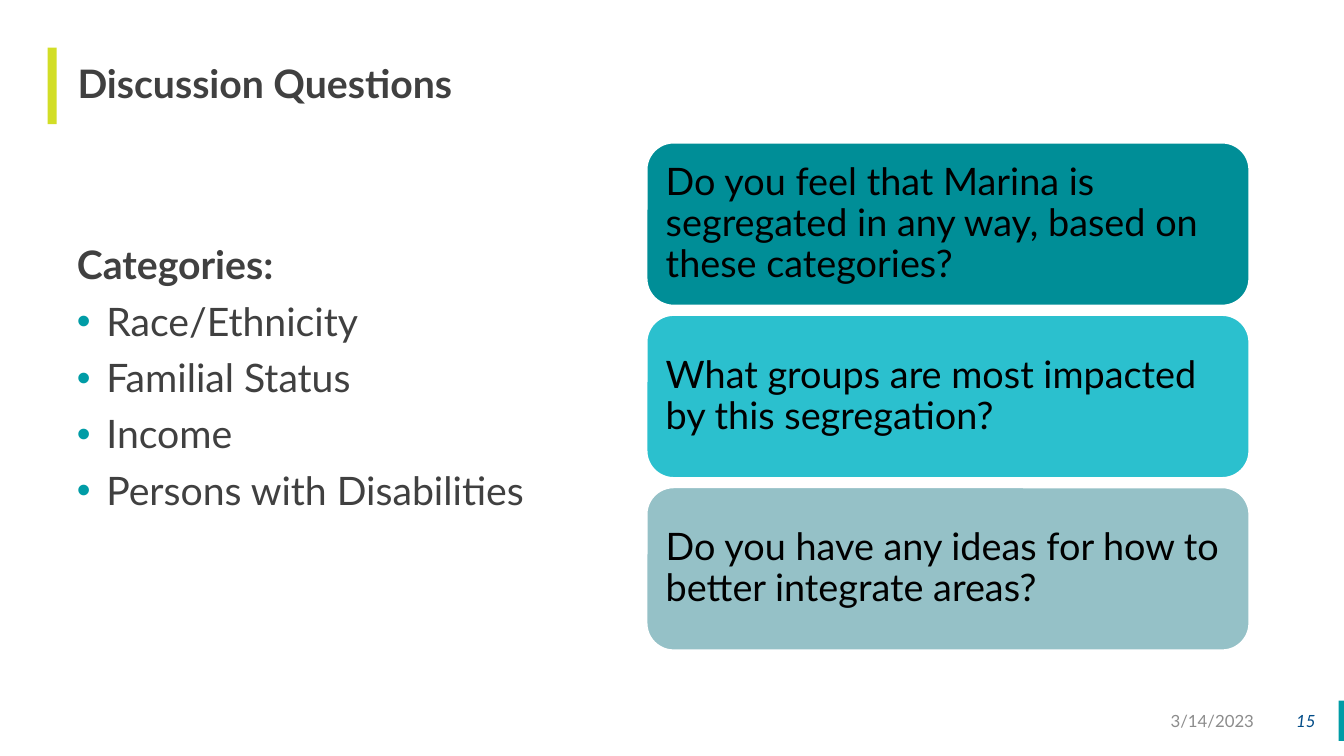
from lxml import etree
from pptx import Presentation
from pptx.dml.color import RGBColor
from pptx.enum.shapes import MSO_SHAPE
from pptx.enum.text import MSO_ANCHOR, MSO_AUTO_SIZE, PP_ALIGN
from pptx.oxml.ns import qn
from pptx.util import Pt

RECT, ROUNDED = MSO_SHAPE.RECTANGLE, MSO_SHAPE.ROUNDED_RECTANGLE
MIDDLE, TOP = MSO_ANCHOR.MIDDLE, MSO_ANCHOR.TOP
LEFT, RIGHT = PP_ALIGN.LEFT, PP_ALIGN.RIGHT
NO_AUTOFIT = MSO_AUTO_SIZE.NONE
FONT = "Lato"
COLORS = {
    "teal": "009CA6", "lime": "D2DE26", "text": "404040", "black": "000000",
    "date": "8C8C8C", "number": "004B87", "white": "FFFFFF",
    "segregation": "008E97", "impact": "2BC0CE", "ideas": "95C1C7",
}


def style_runs(paragraph, size, color, bold=False, italic=False):
    for run in paragraph.runs:
        run.font.name = FONT
        run.font.size = Pt(size)
        run.font.bold = bold
        run.font.italic = italic
        run.font.color.rgb = RGBColor.from_string(COLORS[color])


def set_frame(frame, anchor, left=0, top=0, right=0, bottom=0):
    """Set wrapping, vertical anchor and insets in points."""
    frame.word_wrap = True
    frame.auto_size = NO_AUTOFIT
    frame.vertical_anchor = anchor
    frame.margin_left, frame.margin_top = Pt(left), Pt(top)
    frame.margin_right, frame.margin_bottom = Pt(right), Pt(bottom)


prs = Presentation()
prs.slide_width, prs.slide_height = Pt(960), Pt(540)
slide = prs.slides.add_slide(prs.slide_layouts[1])
shapes = slide.shapes

# Accent bars
for color, left, top, width, height in [
    ("teal", 956.2, 500.4, 3.8, 28.8),
    ("lime", 34, 34, 6.5, 54.7),
]:
    accent = shapes.add_shape(RECT, Pt(left), Pt(top), Pt(width), Pt(height))
    accent.shadow.inherit = False
    accent.fill.solid()
    accent.fill.fore_color.rgb = RGBColor.from_string(COLORS[color])
    accent.line.fill.background()

# Title
title = shapes.title
title.left, title.top, title.width, title.height = Pt(41), Pt(34), Pt(886), Pt(54.7)
title.text_frame.text = "Discussion Questions"
set_frame(title.text_frame, MIDDLE, left=14.4)
heading = title.text_frame.paragraphs[0]
heading.alignment = LEFT
heading.line_spacing = 0.9
style_runs(heading, 28, "text", bold=True)

# Categories
categories = slide.placeholders[1]
categories.left, categories.top = Pt(55), Pt(175.7)
categories.width, categories.height = Pt(325), Pt(200)
categories.text_frame.text = "\n".join([
    "Categories:", "Race/Ethnicity", "Familial Status", "Income",
    "Persons with Disabilities",
])
set_frame(categories.text_frame, TOP)
for index, category in enumerate(categories.text_frame.paragraphs):
    is_label = index == 0
    properties = category._p.get_or_add_pPr()
    indent = 0 if is_label else Pt(21)
    properties.set("marL", str(indent))
    properties.set("indent", str(-indent))
    if is_label:
        etree.SubElement(properties, qn("a:buNone"))
    else:
        bullet_color = etree.SubElement(properties, qn("a:buClr"))
        etree.SubElement(bullet_color, qn("a:srgbClr"), val=COLORS["teal"])
        etree.SubElement(properties, qn("a:buFont"), typeface="Arial")
        etree.SubElement(properties, qn("a:buChar"), char="•")
    category.line_spacing = 0.9
    category.space_before = Pt(0 if is_label else 10)
    style_runs(category, 28, "text", bold=is_label)

# Question cards
CARD_TOP, CARD_STEP = 101.8, 123.1
for index, (color, wording) in enumerate([
    ("segregation", "Do you feel that Marina is segregated in any way, based on these categories?"),
    ("impact", "What groups are most impacted by this segregation?"),
    ("ideas", "Do you have any ideas for how to better integrate areas?"),
]):
    card = shapes.add_shape(ROUNDED, Pt(461.8), Pt(CARD_TOP + index * CARD_STEP),
                            Pt(430.7), Pt(116.6))
    card.shadow.inherit = False
    card.fill.solid()
    card.fill.fore_color.rgb = RGBColor.from_string(COLORS[color])
    card.line.color.rgb = RGBColor.from_string(COLORS["white"])
    card.line.width = Pt(1.5)
    card.text_frame.text = wording
    set_frame(card.text_frame, MIDDLE, 8.1, 8.1, 8.1, 8.1)
    question = card.text_frame.paragraphs[0]
    question.alignment = LEFT
    question.line_spacing = 0.9
    style_runs(question, 27, "black")

# Date and page number
for wording, left, width, color, italic in [
    ("3/14/2023", 686.9, 216, "date", False),
    ("15", 902.9, 43.9, "number", True),
]:
    footer = shapes.add_textbox(Pt(left), Pt(500.4), Pt(width), Pt(28.8))
    footer.text_frame.text = wording
    set_frame(footer.text_frame, MIDDLE, 7.2, 3.6, 7.2, 3.6)
    footer_line = footer.text_frame.paragraphs[0]
    footer_line.alignment = RIGHT
    style_runs(footer_line, 12, color, italic=italic)

prs.save("out.pptx")
